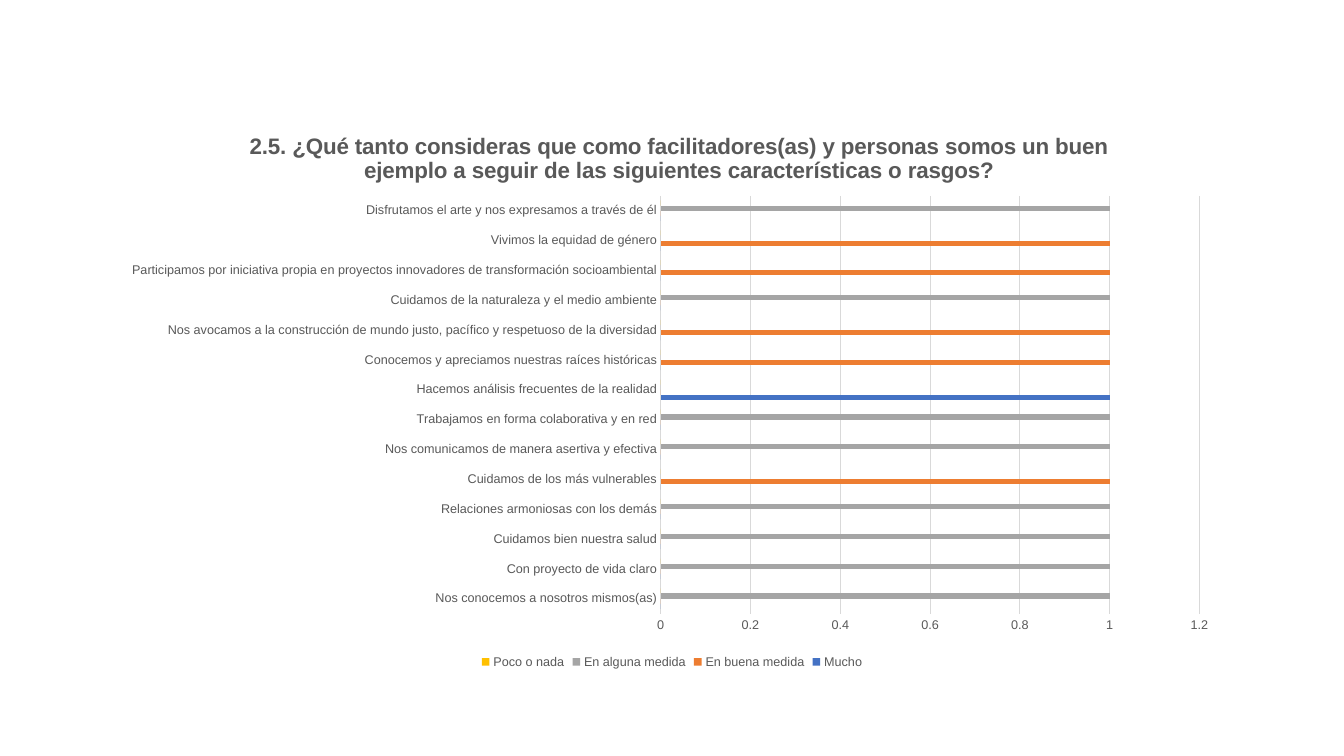
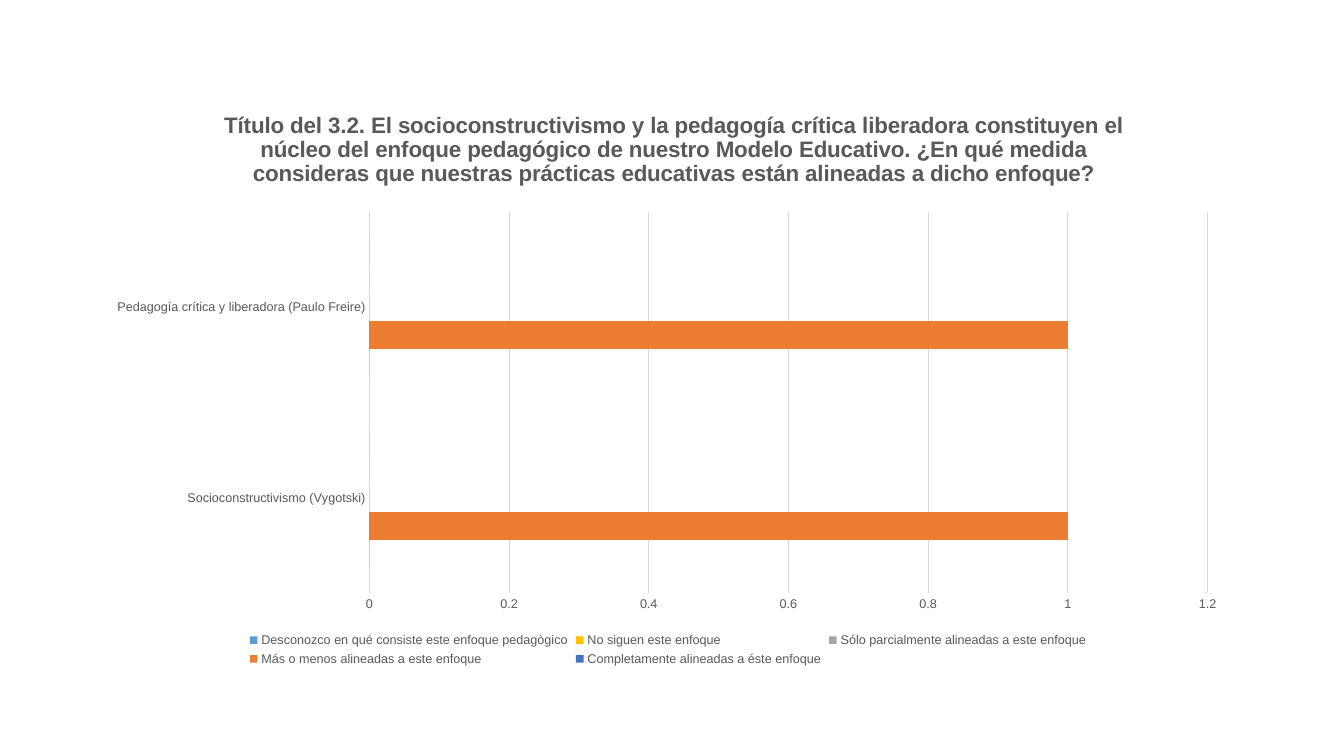
from dataclasses import dataclass

from pptx import Presentation
from pptx import util as u
from pptx.chart.data import CategoryChartData
from pptx.dml.color import RGBColor
from pptx.enum import chart as ch
from pptx.oxml import parse_xml
from pptx.oxml.ns import nsdecls, qn


@dataclass(frozen=True)
class Theme:
    font: str = "Arial"
    text: str = "595959"
    rule: str = "D9D9D9"
    series: tuple = ("4472C4", "ED7D31", "A5A5A5", "FFC000", "5B9BD5")
    title_size: int = 16
    label_size: int = 9
    line_width: float = 0.75


theme = Theme()


def style_font(font, size, bold=False):
    font.name = theme.font
    font.size = u.Pt(size)
    font.bold = bold
    font.color.rgb = RGBColor.from_string(theme.text)


def set_layout(parent, index, target="", **fractions):
    old = parent.find(qn("c:layout"))
    if old is not None:
        parent.remove(old)
    inner = f'<c:layoutTarget val="{target}"/>' if target else ""
    inner += "".join(f'<c:{k}Mode val="edge"/>' for k in "xy")
    inner += "".join(f'<c:{k} val="{v}"/>' for k, v in fractions.items())
    parent.insert(index, parse_xml(
        f'<c:layout {nsdecls("c")}><c:manualLayout>{inner}</c:manualLayout></c:layout>'))


surveys = [
    {
        "title": "2.5. ¿Qué tanto consideras que como facilitadores(as) y personas somos "
                 "un buen ejemplo a seguir de las siguientes características o rasgos?",
        "box": (1.1, 1.04, 11.13, 5.64),
        "title_at": {"x": 0.12, "y": 0.04},
        "plot": {"x": 0.49, "y": 0.16, "w": 0.48, "h": 0.735},
        "levels": ["Mucho", "En buena medida", "En alguna medida", "Poco o nada"],
        "answers": [
            ("Nos conocemos a nosotros mismos(as)", "En alguna medida"),
            ("Con proyecto de vida claro", "En alguna medida"),
            ("Cuidamos bien nuestra salud", "En alguna medida"),
            ("Relaciones armoniosas con los demás", "En alguna medida"),
            ("Cuidamos de los más vulnerables", "En buena medida"),
            ("Nos comunicamos de manera asertiva y efectiva", "En alguna medida"),
            ("Trabajamos en forma colaborativa y en red", "En alguna medida"),
            ("Hacemos análisis frecuentes de la realidad", "Mucho"),
            ("Conocemos y apreciamos nuestras raíces históricas", "En buena medida"),
            ("Nos avocamos a la construcción de mundo justo, pacífico y respetuoso "
             "de la diversidad", "En buena medida"),
            ("Cuidamos de la naturaleza y el medio ambiente", "En alguna medida"),
            ("Participamos por iniciativa propia en proyectos innovadores de "
             "transformación socioambiental", "En buena medida"),
            ("Vivimos la equidad de género", "En buena medida"),
            ("Disfrutamos el arte y nos expresamos a través de él", "En alguna medida"),
        ],
    },
    {
        "title": "Título del 3.2. El socioconstructivismo y la pedagogía crítica liberadora "
                 "constituyen el núcleo del enfoque pedagógico de nuestro Modelo Educativo. "
                 "¿En qué medida consideras que nuestras prácticas educativas están "
                 "alineadas a dicho enfoque?",
        "box": (0.93, 1, 11.39, 5.65),
        "title_at": {"x": 0.11, "y": 0.01},
        "plot": {"x": 0.24, "y": 0.195, "w": 0.73, "h": 0.67},
        "levels": [
            "Completamente alineadas a éste enfoque",
            "Más o menos alineadas a este enfoque",
            "Sólo parcialmente alineadas a este enfoque",
            "No siguen este enfoque",
            "Desconozco en qué consiste este enfoque pedagògico",
        ],
        "answers": [
            ("Socioconstructivismo (Vygotski)", "Más o menos alineadas a este enfoque"),
            ("Pedagogía crítica y liberadora (Paulo Freire)",
             "Más o menos alineadas a este enfoque"),
        ],
    },
]

prs = Presentation()
prs.slide_width, prs.slide_height = u.Inches(13.33), u.Inches(7.5)
blank = prs.slide_layouts.get_by_name("Blank")

for survey in surveys:
    s = prs.slides.add_slide(blank)
    data = CategoryChartData()
    data.categories = [trait for trait, answer in survey["answers"]]
    for level in survey["levels"]:
        data.add_series(level, [int(answer == level) for trait, answer in survey["answers"]])
    box = [u.Inches(v) for v in survey["box"]]
    chart = s.shapes.add_chart(ch.XL_CHART_TYPE.BAR_CLUSTERED, *box, data).chart
    style_font(chart.font, theme.label_size)

    chart.has_title = True
    tf = chart.chart_title.text_frame
    tf.text = survey["title"]
    style_font(tf.paragraphs[0].runs[0].font, theme.title_size, bold=True)
    chart.chart_title.include_in_layout = False
    set_layout(chart.element.chart.find(qn("c:title")), 1, **survey["title_at"])
    set_layout(chart.element.chart.plotArea, 0, "inner", **survey["plot"])

    chart.has_legend = True
    chart.legend.position = ch.XL_LEGEND_POSITION.BOTTOM
    chart.legend.include_in_layout = False
    style_font(chart.legend.font, theme.label_size)

    plot = chart.plots[0]
    plot.gap_width = 182
    plot.vary_by_categories = False
    for series, color in zip(plot.series, theme.series):
        series.format.fill.solid()
        series.format.fill.fore_color.rgb = RGBColor.from_string(color)

    cat_axis, val_axis = chart.category_axis, chart.value_axis
    for axis in (cat_axis, val_axis):
        axis.major_tick_mark = axis.minor_tick_mark = ch.XL_TICK_MARK.NONE
        style_font(axis.tick_labels.font, theme.label_size)
    val_axis.minimum_scale, val_axis.maximum_scale, val_axis.major_unit = 0, 1.2, 0.2
    val_axis.has_major_gridlines = True
    val_axis.format.line.fill.background()
    for line in (cat_axis.format.line, val_axis.major_gridlines.format.line):
        line.color.rgb = RGBColor.from_string(theme.rule)
        line.width = u.Pt(theme.line_width)

prs.save("out.pptx")
